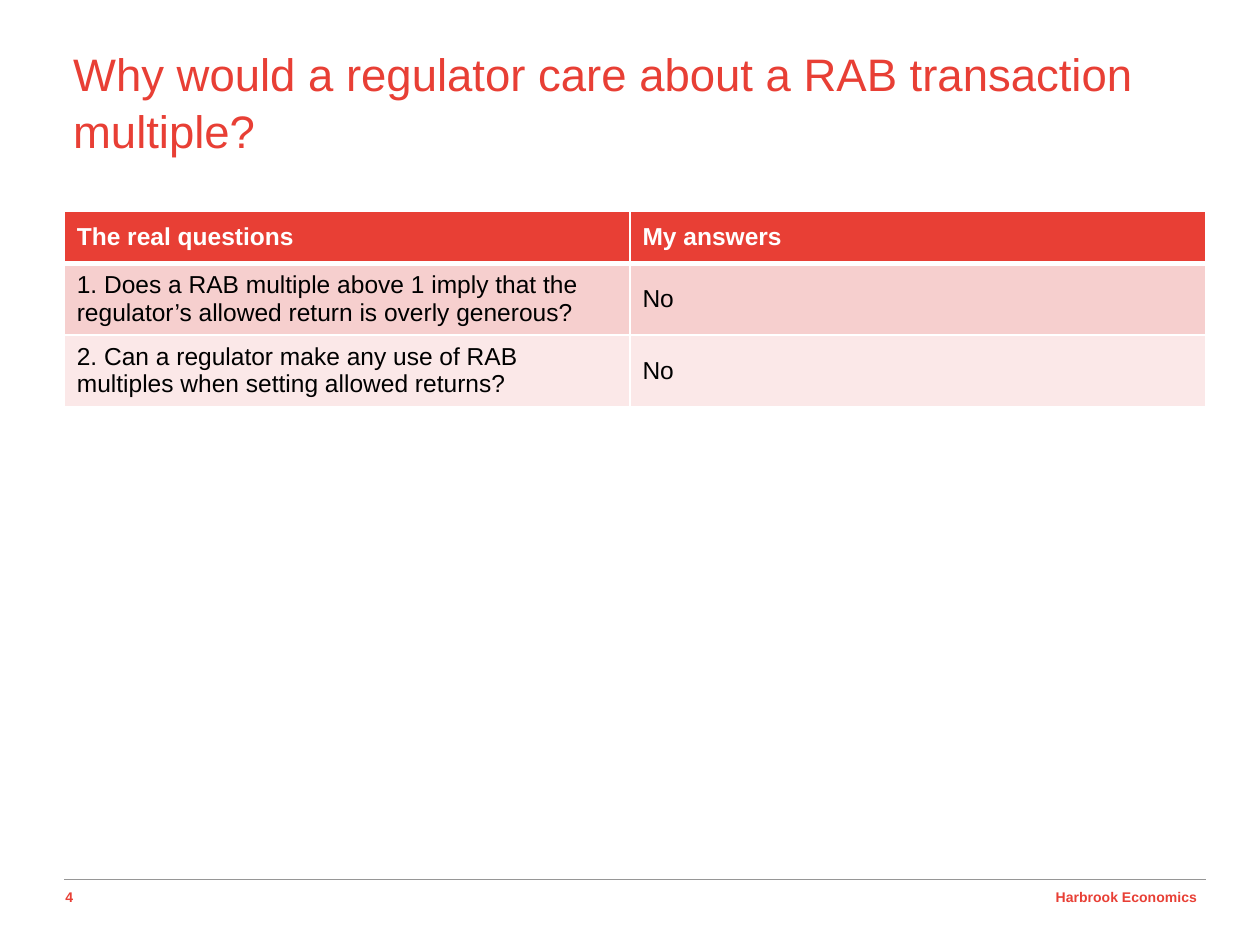
"""Build the slide on regulators and RAB transaction multiples."""
from typing import NamedTuple

from lxml import etree
from pptx import Presentation
from pptx.dml.color import RGBColor
from pptx.enum.shapes import MSO_CONNECTOR
from pptx.enum.text import MSO_ANCHOR, PP_ALIGN
from pptx.oxml.ns import qn
from pptx.util import Inches, Pt

RED = RGBColor(0xE8, 0x3F, 0x35)
PINK = RGBColor(0xF6, 0xCF, 0xCE)
PALE_PINK = RGBColor(0xFB, 0xE8, 0xE8)
GREY = RGBColor(0x96, 0x96, 0x96)
WHITE = RGBColor(0xFF, 0xFF, 0xFF)
BLACK = RGBColor(0, 0, 0)
FONT = "Arial"
LEFT, RIGHT, RULE_Y = 0.51, 9.57, 6.98
COL_WIDTHS = (4.49, 4.57)
STRAIGHT = MSO_CONNECTOR.STRAIGHT
MIDDLE, TOP = MSO_ANCHOR.MIDDLE, MSO_ANCHOR.TOP
ALIGN_LEFT, ALIGN_RIGHT = PP_ALIGN.LEFT, PP_ALIGN.RIGHT


class Row(NamedTuple):
    texts: tuple[str, str]
    height: float
    fill: RGBColor
    color: RGBColor = BLACK
    bold: bool = False
    bottom: float = 1


class Footer(NamedTuple):
    text: str
    left: float
    width: float
    align: PP_ALIGN


ROWS = (
    Row(("The real questions", "My answers"), 0.41, RED, WHITE, True, 3),
    Row(("1. Does a RAB multiple above 1 imply that the regulator’s allowed "
         "return is overly generous?", "No"), 0.53, PINK),
    Row(("2. Can a regulator make any use of RAB multiples when setting "
         "allowed returns?", "No"), 0.53, PALE_PINK),
)
FOOTERS = (
    Footer("4", 0.42, 0.37, ALIGN_LEFT),
    Footer("Harbrook Economics", 7.2, 2.4, ALIGN_RIGHT),
)


def write(tf, text: str, size: float, color: RGBColor, bold: bool = False,
          align: PP_ALIGN = ALIGN_LEFT) -> None:
    """Set one formatted paragraph."""
    tf.text = text
    tf.word_wrap = True
    p = tf.paragraphs[0]
    p.alignment = align
    font = p.runs[0].font
    font.name, font.size, font.bold = FONT, Pt(size), bold
    font.color.rgb = color


def set_borders(cell, widths: dict[str, float]) -> None:
    """Give a cell white borders, placed ahead of its fill."""
    tc_pr = cell._tc.get_or_add_tcPr()
    for i, (side, width) in enumerate(widths.items()):
        ln = etree.Element(qn(f"a:ln{side}"), w=str(Pt(width)))
        fill = etree.SubElement(ln, qn("a:solidFill"))
        etree.SubElement(fill, qn("a:srgbClr"), val=str(WHITE))
        tc_pr.insert(i, ln)


def add_title(s) -> None:
    """Place and format the title."""
    sp = s.shapes.title
    sp.left, sp.top = Inches(0.48), Inches(0.29)
    sp.width, sp.height = Inches(9.08), Inches(0.75)
    tf = sp.text_frame
    write(tf, "Why would a regulator care about a RAB transaction multiple?",
          26, RED)
    tf.vertical_anchor = TOP
    tf.paragraphs[0].line_spacing = 1.05


def add_questions(s) -> None:
    """Draw the table of questions and answers."""
    table = s.shapes.add_table(
        len(ROWS), len(COL_WIDTHS), Inches(LEFT), Inches(1.68),
        Inches(sum(COL_WIDTHS)), Inches(sum(r.height for r in ROWS))).table
    for col, width in zip(table.columns, COL_WIDTHS):
        col.width = Inches(width)
    top = 1
    for line, row in zip(table.rows, ROWS):
        line.height = Inches(row.height)
        for cell, text in zip(line.cells, row.texts):
            write(cell.text_frame, text, 14, row.color, row.bold)
            cell.vertical_anchor = MIDDLE
            cell.fill.solid()
            cell.fill.fore_color.rgb = row.fill
            set_borders(cell, {"L": 1, "R": 1, "T": top, "B": row.bottom})
        top = row.bottom


def add_footer(s) -> None:
    """Draw the rule with the page number and firm name below."""
    rule = s.shapes.add_connector(STRAIGHT, Inches(LEFT), Inches(RULE_Y),
                                  Inches(RIGHT), Inches(RULE_Y))
    rule.line.color.rgb = GREY
    rule.line.width = Pt(0.75)
    etree.SubElement(rule._element.spPr, qn("a:effectLst"))
    for item in FOOTERS:
        sp = s.shapes.add_textbox(Inches(item.left), Inches(7),
                                  Inches(item.width), Inches(0.23))
        write(sp.text_frame, item.text, 8, RED, True, item.align)


def main() -> None:
    """Build and save the presentation."""
    prs = Presentation()
    prs.slide_width, prs.slide_height = Inches(10), Inches(7.5)
    s = prs.slides.add_slide(prs.slide_layouts[5])
    add_footer(s)
    add_title(s)
    add_questions(s)
    prs.save("out.pptx")


if __name__ == "__main__":
    main()
